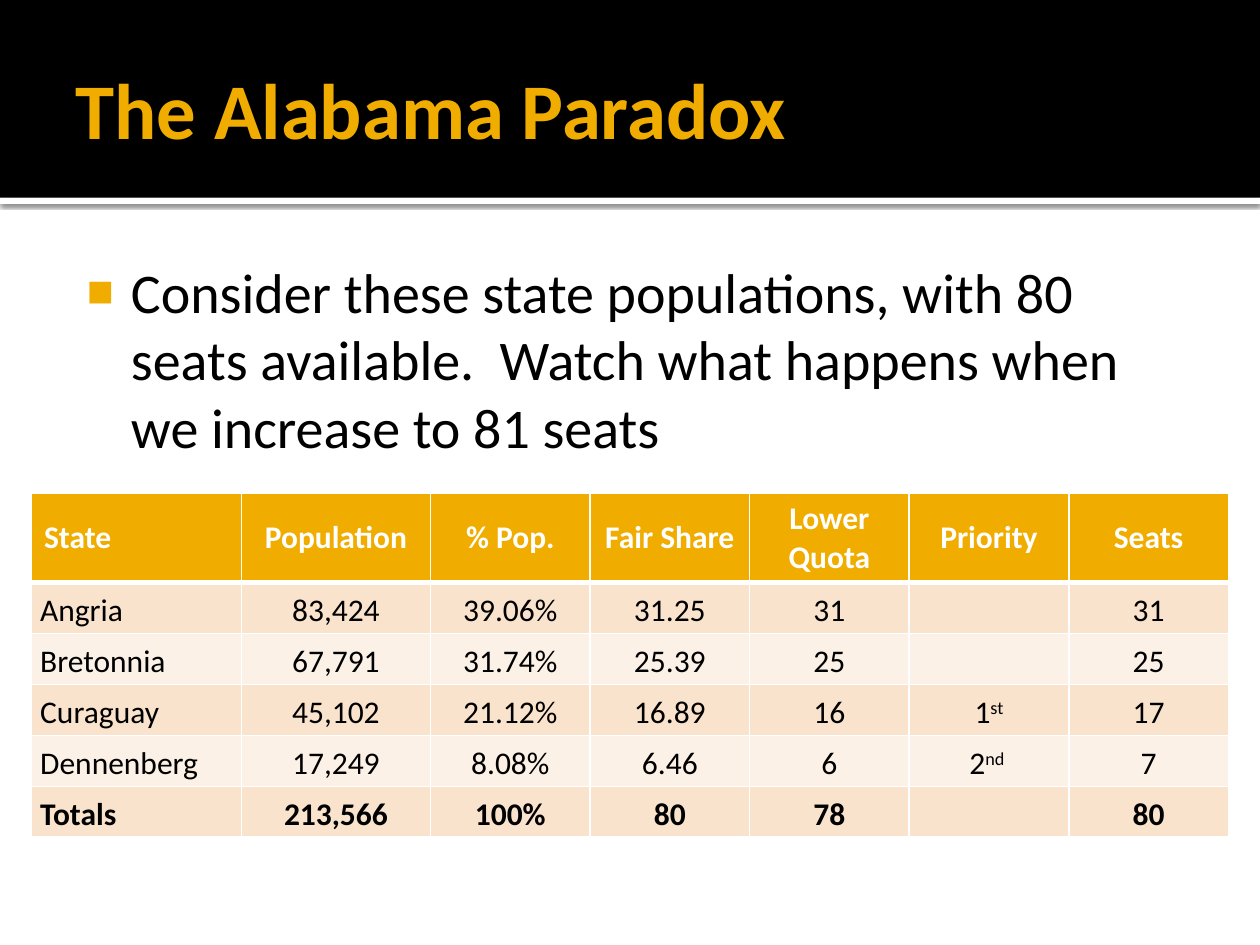
"""Build the Alabama Paradox slide with its apportionment table."""
from lxml.etree import SubElement as Sub
from pptx import Presentation
from pptx.dml.color import RGBColor as Rgb
from pptx.enum.shapes import MSO_SHAPE as Kind
from pptx.enum.text import MSO_ANCHOR as Anchor, PP_ALIGN as Align
from pptx.oxml import parse_xml
from pptx.oxml.ns import nsdecls, qn
from pptx.util import Pt

HEX = {"gold": "F0AD00", "black": "000000", "white": "FFFFFF",
       "dark": "F9E3CC", "light": "FCF1E7"}
ROWS = [
    ["State", "Population", "% Pop.", "Fair Share", "Lower Quota", "Priority", "Seats"],
    ["Angria", "83,424", "39.06%", "31.25", "31", "", "31"],
    ["Bretonnia", "67,791", "31.74%", "25.39", "25", "", "25"],
    ["Curaguay", "45,102", "21.12%", "16.89", "16", ("1", "st"), "17"],
    ["Dennenberg", "17,249", "8.08%", "6.46", "6", ("2", "nd "), "7"],
    ["Totals", "213,566", "100%", "80", "78", "", "80"],
]
WIDTHS = [120, 108] + [91.2] * 5
HEAD = {"margin_left": Pt(7.2), "margin_right": Pt(7.2),
        "margin_top": Pt(3.6), "margin_bottom": Pt(3.6)}
BODY = {"margin_left": Pt(5), "margin_right": Pt(5),
        "margin_top": 0, "margin_bottom": 0}


def put(obj, **vals):
    for name, val in vals.items():
        setattr(obj, name, val)


def paint(fill, key):
    fill.solid()
    fill.fore_color.rgb = Rgb.from_string(HEX[key])


def write(par, text, key, size, bold=False):
    run = par.add_run()
    run.text = text
    put(run.font, name="Calibri", size=Pt(size), bold=bold)
    run.font.color.rgb = Rgb.from_string(HEX[key])
    return run


def band(slide, top, high, key):
    shape = slide.shapes.add_shape(Kind.RECTANGLE, 0, Pt(top), Pt(720), Pt(high))
    shape.shadow.inherit = False
    paint(shape.fill, key)
    shape.line.fill.background()
    slide.shapes._spTree.insert(2, shape._element)
    return shape


def shade(shape):
    effect = shape._element.spPr.find(qn("a:effectLst"))
    shadow = Sub(effect, qn("a:outerShdw"), blurRad=str(Pt(2.5)), dist=str(Pt(0.8)),
                 dir="5400000", algn="t", rotWithShape="0")
    color = Sub(shadow, qn("a:srgbClr"), val=HEX["black"])
    Sub(color, qn("a:alpha"), val="60000")


def title(slide, text):
    box = slide.shapes.title
    put(box, left=Pt(36), top=Pt(12), width=Pt(648), height=Pt(99))
    put(box.text_frame, vertical_anchor=Anchor.MIDDLE, word_wrap=True,
        margin_left=Pt(7.2), margin_right=Pt(3.6),
        margin_top=Pt(3.6), margin_bottom=Pt(3.6))
    par = box.text_frame.paragraphs[0]
    par.alignment = Align.LEFT
    write(par, text, "gold", 45, True)


def bullet(slide, text):
    box = slide.shapes.add_textbox(Pt(36), Pt(140), Pt(648), Pt(364))
    put(box.text_frame, word_wrap=True, margin_left=Pt(4.3), margin_right=Pt(7.2),
        margin_top=Pt(7.2), margin_bottom=Pt(3.6))
    par = box.text_frame.paragraphs[0]
    write(par, text, "black", 32)
    props = par._p.get_or_add_pPr()
    props.set("marL", str(Pt(34.56)))
    props.set("indent", str(Pt(-25.2)))
    Sub(Sub(props, qn("a:buClr")), qn("a:srgbClr"), val=HEX["gold"])
    Sub(props, qn("a:buSzPct"), val="80000")
    Sub(props, qn("a:buFont"), typeface="Arial")
    Sub(props, qn("a:buChar"), char="■")


def border(cell, row):
    wide = {"L": 1, "R": 1, "T": 3 if row == 1 else 1, "B": 1 if row else 3}
    props = cell._tc.get_or_add_tcPr()
    for spot, (side, size) in enumerate(wide.items()):
        props.insert(spot, parse_xml(
            f'<a:ln{side} {nsdecls("a")} w="{Pt(size)}"><a:solidFill>'
            f'<a:srgbClr val="{HEX["white"]}"/></a:solidFill></a:ln{side}>'))


def fill_cell(cell, value, row, col):
    put(cell, vertical_anchor=Anchor.MIDDLE, **(BODY if row else HEAD))
    paint(cell.fill, ("dark" if row % 2 else "light") if row else "gold")
    border(cell, row)
    par = cell.text_frame.paragraphs[0]
    par.alignment = Align.CENTER if col else Align.LEFT
    if row:
        par.line_spacing = 1.15
    parts = (value,) if isinstance(value, str) else value
    for spot, text in enumerate(parts):
        if text:
            run = write(par, text, "black" if row else "white", 18,
                        row in (0, len(ROWS) - 1))
            if spot:
                run.font._element.set("baseline", "30000")


def grid(slide):
    table = slide.shapes.add_table(len(ROWS), len(WIDTHS), Pt(18), Pt(282),
                                   Pt(sum(WIDTHS)), Pt(196.5)).table
    for col, width in zip(table.columns, WIDTHS):
        col.width = Pt(width)
    for row, values in enumerate(ROWS):
        table.rows[row].height = Pt(29.1 if row else 51)
        for col, value in enumerate(values):
            fill_cell(table.cell(row, col), value, row, col)


def main():
    prs = Presentation()
    put(prs, slide_width=Pt(720), slide_height=Pt(540))
    slide = prs.slides.add_slide(prs.slide_layouts[5])
    band(slide, 0, 113, "black")
    shade(band(slide, 113, 3.6, "white"))
    title(slide, "The Alabama Paradox")
    bullet(slide, "Consider these state populations, with 80 seats available.  "
                  "Watch what happens when we increase to 81 seats")
    grid(slide)
    prs.save("out.pptx")


if __name__ == "__main__":
    main()
